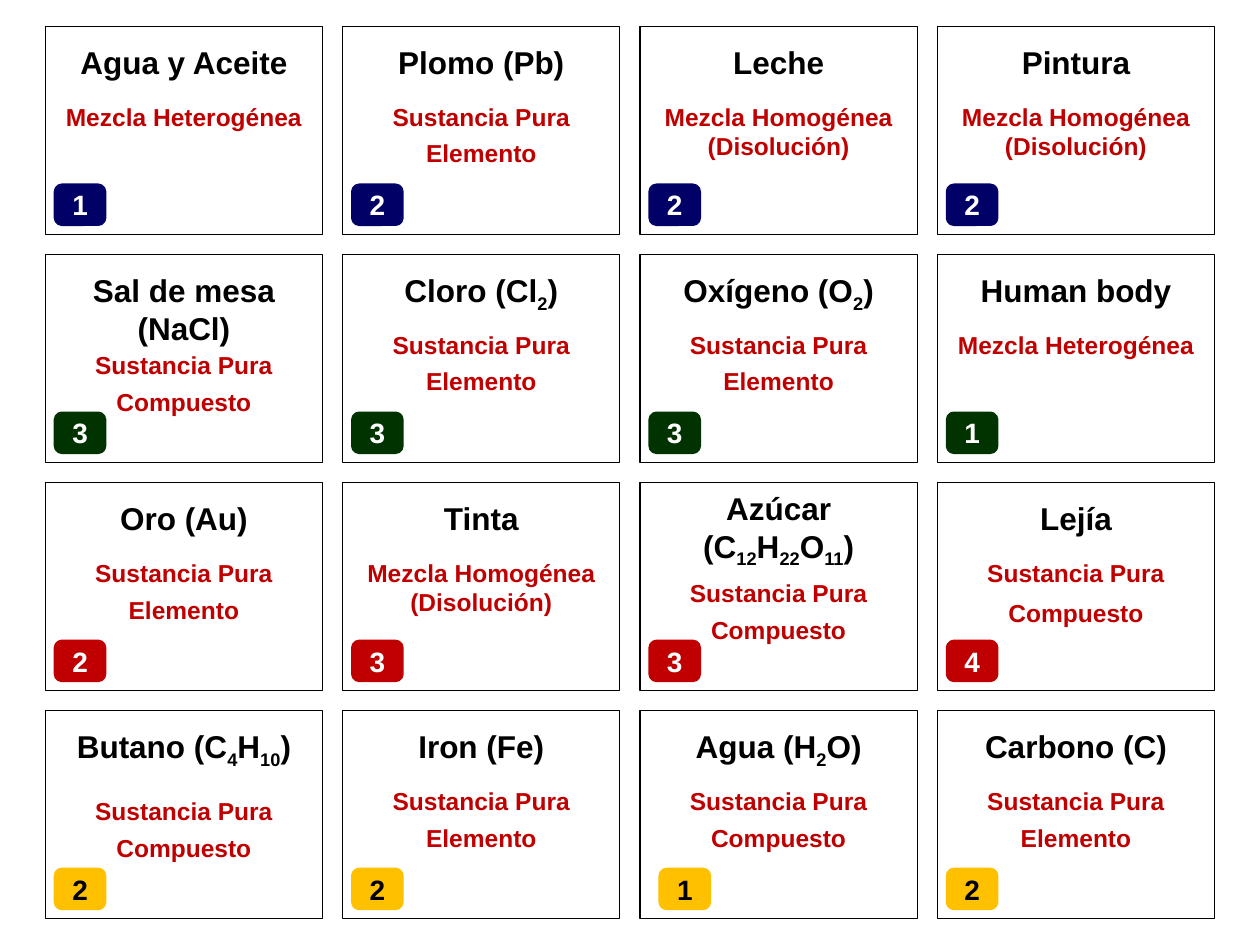
"""Build a four by four grid of cards that classify everyday substances."""
from dataclasses import dataclass

from pptx import Presentation
from pptx.dml.color import RGBColor
from pptx.enum.shapes import MSO_SHAPE
from pptx.enum.text import MSO_ANCHOR, MSO_AUTO_SIZE, PP_ALIGN
from pptx.util import Inches, Pt

RECTANGLE = MSO_SHAPE.RECTANGLE
ROUNDED = MSO_SHAPE.ROUNDED_RECTANGLE
CENTER = PP_ALIGN.CENTER
MIDDLE = MSO_ANCHOR.MIDDLE
GROW = MSO_AUTO_SIZE.SHAPE_TO_FIT_TEXT

COLORS = {
    "white": "FFFFFF",
    "black": "000000",
    "red": "C00000",
    "navy": "000066",
    "green": "003300",
    "amber": "FFC000",
}
FONT = "Arial"
PAGE_WIDTH, PAGE_HEIGHT = 10, 7.5
COLUMNS, ROWS = 4, 4
CARD_WIDTH, CARD_HEIGHT = 2.2, 1.65
GAP = 0.16
LEFT = (PAGE_WIDTH - COLUMNS * CARD_WIDTH - (COLUMNS - 1) * GAP) / 2
TOP = (PAGE_HEIGHT - ROWS * CARD_HEIGHT - (ROWS - 1) * GAP) / 2
INSET = 0.08
BADGE_WIDTH, BADGE_HEIGHT = 0.39, 0.31
LABEL_HEIGHT = 0.34

HETEROGENEOUS = ("Mezcla Heterogénea",)
HOMOGENEOUS = ("Mezcla Homogénea\n(Disolución)",)
ELEMENT = ("Sustancia Pura", "Elemento")
COMPOUND = ("Sustancia Pura", "Compuesto")


@dataclass(frozen=True)
class Card:
    title: str
    labels: tuple[str, ...]
    number: int
    title_top: float = INSET
    label_top: float = 0.55
    label_step: float = 0.29
    badge_left: float = INSET


@dataclass(frozen=True)
class Row:
    badge_color: str
    number_color: str
    cards: tuple[Card, ...]


GRID = (
    Row("navy", "white", (
        Card("Agua y Aceite", HETEROGENEOUS, 1),
        Card("Plomo (Pb)", ELEMENT, 2),
        Card("Leche", HOMOGENEOUS, 2),
        Card("Pintura", HOMOGENEOUS, 2),
    )),
    Row("green", "white", (
        Card("Sal de mesa (NaCl)", COMPOUND, 3, label_top=0.71),
        Card("Cloro (Cl_2_)", ELEMENT, 3),
        Card("Oxígeno (O_2_)", ELEMENT, 3),
        Card("Human body", HETEROGENEOUS, 1),
    )),
    Row("red", "white", (
        Card("Oro (Au)", ELEMENT, 2),
        Card("Tinta", HOMOGENEOUS, 3),
        Card("Azúcar\n(C_12_H_22_O_11_)", COMPOUND, 3, title_top=0, label_top=0.71),
        Card("Lejía", COMPOUND, 4, label_step=0.32),
    )),
    Row("amber", "black", (
        Card("Butano (C_4_H_10_)", COMPOUND, 2, label_top=0.63),
        Card("Iron (Fe)", ELEMENT, 2),
        Card("Agua (H_2_O)", COMPOUND, 1, badge_left=2 * INSET),
        Card("Carbono (C)", ELEMENT, 2),
    )),
)


def write(frame, text: str, *, size: float, color: str) -> None:
    """Write bold centred lines, lowering the parts between underscores."""
    for index, line in enumerate(text.split("\n")):
        para = frame.paragraphs[0] if index == 0 else frame.add_paragraph()
        para.alignment = CENTER
        for position, part in enumerate(line.split("_")):
            if not part:
                continue
            span = para.add_run()
            span.text = part
            span.font.name = FONT
            span.font.size = Pt(size)
            span.font.bold = True
            span.font.color.rgb = RGBColor.from_string(COLORS[color])
            if position % 2:
                span.font._element.set("baseline", "-25000")


def add_text(shapes, text: str, *, left: float, top: float, width: float,
             height: float, size: float, color: str) -> None:
    """Add a wrapping text box that grows with its text."""
    box = shapes.add_textbox(Inches(left), Inches(top), Inches(width), Inches(height))
    box.text_frame.word_wrap = True
    box.text_frame.auto_size = GROW
    write(box.text_frame, text, size=size, color=color)


def add_panel(shapes, kind, *, left: float, top: float, width: float,
              height: float, fill: str, line: str, weight: float):
    """Add a flat filled and outlined shape."""
    panel = shapes.add_shape(kind, Inches(left), Inches(top), Inches(width), Inches(height))
    panel.shadow.inherit = False
    panel.fill.solid()
    panel.fill.fore_color.rgb = RGBColor.from_string(COLORS[fill])
    panel.line.color.rgb = RGBColor.from_string(COLORS[line])
    panel.line.width = Pt(weight)
    return panel


def add_card(page, card: Card, left: float, top: float) -> None:
    """Draw a grouped card with its title and labels."""
    shapes = page.shapes.add_group_shape().shapes
    add_panel(shapes, RECTANGLE, left=left, top=top, width=CARD_WIDTH,
              height=CARD_HEIGHT, fill="white", line="black", weight=0.75)
    title_height = 0.71 if len(card.title) > 17 and "Butano" not in card.title else 0.4
    add_text(shapes, card.title, left=left + INSET, top=top + card.title_top,
             width=CARD_WIDTH - 2 * INSET, height=title_height, size=18, color="black")
    for index, label in enumerate(card.labels):
        overhang = INSET * (1 - index)
        add_text(shapes, label, left=left - overhang,
                 top=top + card.label_top + index * card.label_step,
                 width=CARD_WIDTH + 2 * overhang,
                 height=LABEL_HEIGHT + 0.23 * label.count("\n"), size=14, color="red")


def add_badge(page, card: Card, row: Row, left: float, top: float) -> None:
    """Draw the numbered badge at the foot of a card."""
    badge = add_panel(page.shapes, ROUNDED, left=left + card.badge_left,
                      top=top + CARD_HEIGHT - INSET - BADGE_HEIGHT,
                      width=BADGE_WIDTH, height=BADGE_HEIGHT,
                      fill=row.badge_color, line=row.badge_color, weight=2)
    badge.text_frame.vertical_anchor = MIDDLE
    write(badge.text_frame, str(card.number), size=16, color=row.number_color)


def main() -> None:
    """Build and save the deck."""
    deck = Presentation()
    deck.slide_width, deck.slide_height = Inches(PAGE_WIDTH), Inches(PAGE_HEIGHT)
    page = deck.slides.add_slide(deck.slide_layouts[6])
    for row_index, row in enumerate(GRID):
        top = TOP + row_index * (CARD_HEIGHT + GAP)
        for column, card in enumerate(row.cards):
            left = LEFT + column * (CARD_WIDTH + GAP)
            add_card(page, card, left, top)
            add_badge(page, card, row, left, top)
    deck.save("out.pptx")


if __name__ == "__main__":
    main()
